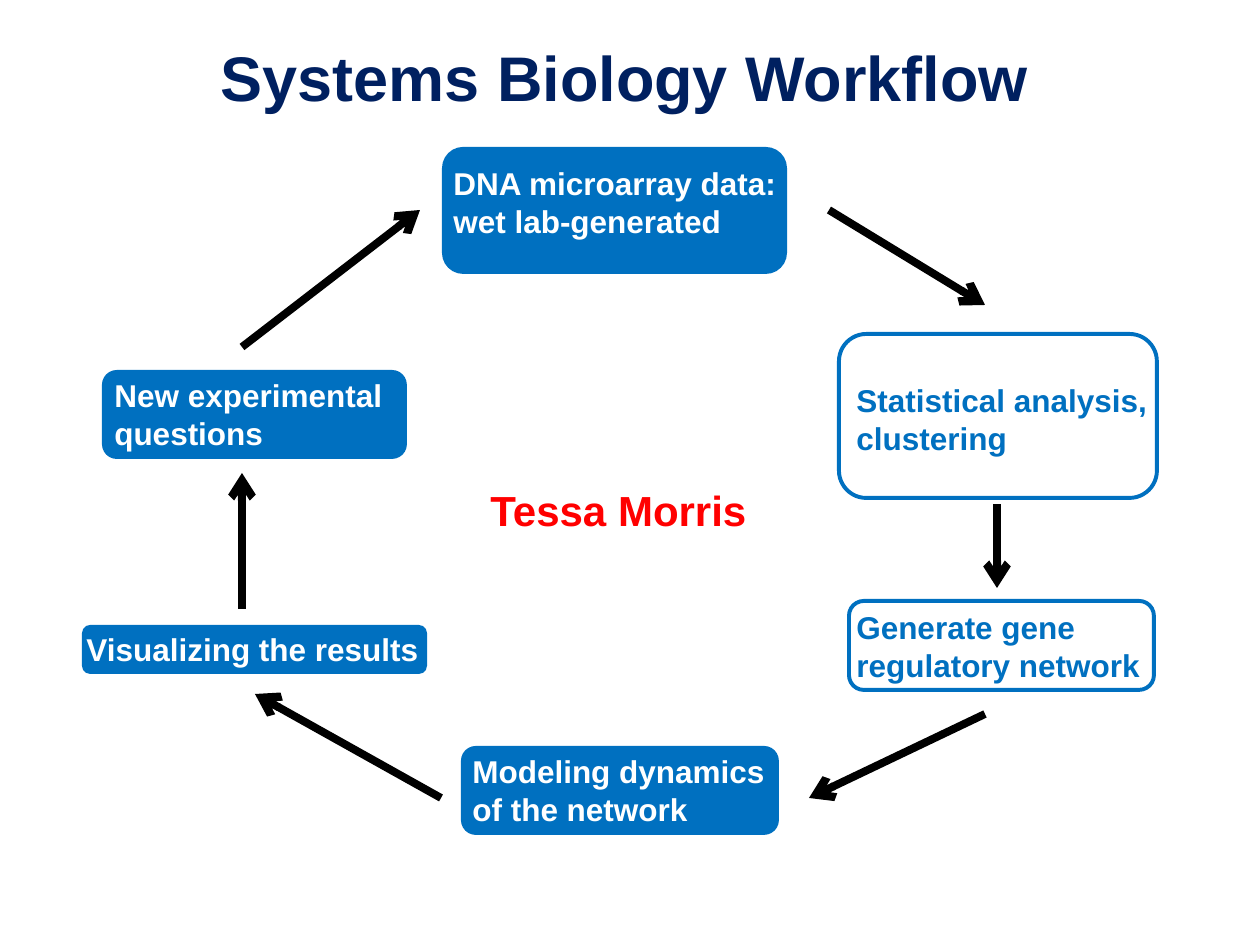
from dataclasses import dataclass

from lxml.etree import SubElement
from pptx import Presentation
from pptx.dml.color import RGBColor
from pptx.enum.shapes import MSO_CONNECTOR, MSO_SHAPE
from pptx.enum.text import MSO_ANCHOR, PP_ALIGN
from pptx.oxml.ns import qn
from pptx.util import Pt

PX = 914400 / 126  # EMU in one px


@dataclass(frozen=True)
class Theme:
    font: str = "Arial"
    navy: str = "002060"
    blue: str = "0070C0"
    white: str = "FFFFFF"
    red: str = "FF0000"
    black: str = "000000"
    title_size: int = 36
    author_size: int = 24
    step_size: int = 18
    outline: float = 2.25
    arrow: float = 4.5


THEME = Theme()

# Content: all places are left, top, width, height in px
TITLE = ("Systems Biology Workflow", (136, 32, 977, 89))
AUTHOR = ("Tessa Morris", (478, 478, 284, 63))

# Steps clockwise: paragraphs, box place, label place, fill, wrap
STEPS = [
    (["DNA microarray data:", "wet lab-generated"],
     (442, 147, 345, 127), (441, 158, 357, 89), "blue", True),
    (["Statistical analysis,", "clustering"],
     (839, 334, 318, 164), (844, 375, 318, 89), None, True),
    (["Generate gene regulatory network"],
     (849, 601, 305, 89), (844, 602, 325, 89), "white", True),
    (["Modeling dynamics of the network"],
     (461, 746, 318, 89), (460, 746, 319, 89), "blue", True),
    (["Visualizing the results"],
     (82, 625, 345, 49), (74, 624, 360, 50), "blue", False),
    (["New experimental questions"],
     (102, 370, 305, 89), (102, 370, 305, 89), "blue", True),
]

# Arrows clockwise: start, end
ARROWS = [
    ((829, 210), (985, 305)),
    ((997, 504), (997, 588)),
    ((985, 714), (809, 798)),
    ((441, 798), (255, 694)),
    ((242, 609), (242, 473)),
    ((242, 347), (420, 210)),
]


def emu(lengths):
    return [round(length * PX) for length in lengths]


def rgb(colour):
    return RGBColor.from_string(colour)


def add_text(slide, paragraphs, place, *, size, colour, align=PP_ALIGN.LEFT, wrap=True):
    frame = slide.shapes.add_textbox(*emu(place)).text_frame
    frame.word_wrap = wrap
    frame.vertical_anchor = MSO_ANCHOR.TOP
    for index, words in enumerate(paragraphs):
        paragraph = frame.paragraphs[0] if index == 0 else frame.add_paragraph()
        paragraph.alignment = align
        run = paragraph.add_run()
        run.text = words
        run.font.name = THEME.font
        run.font.size = Pt(size)
        run.font.bold = True
        run.font.color.rgb = rgb(colour)


def add_box(slide, place, fill):
    box = slide.shapes.add_shape(MSO_SHAPE.ROUNDED_RECTANGLE, *emu(place))
    box.shadow.inherit = False
    if fill:
        box.fill.solid()
        box.fill.fore_color.rgb = rgb(getattr(THEME, fill))
    else:
        box.fill.background()
    if fill == "blue":
        box.line.fill.background()
    else:
        box.line.color.rgb = rgb(THEME.blue)
        box.line.width = Pt(THEME.outline)


def add_arrow(slide, start, end):
    arrow = slide.shapes.add_connector(MSO_CONNECTOR.STRAIGHT, *emu(start + end))
    arrow.line.color.rgb = rgb(THEME.black)
    arrow.line.width = Pt(THEME.arrow)
    properties = arrow.element.spPr
    SubElement(properties.find(qn("a:ln")), qn("a:tailEnd"), type="arrow")
    SubElement(properties, qn("a:effectLst"))


def main():
    deck = Presentation()
    deck.slide_width, deck.slide_height = emu((1260, 945))
    slide = deck.slides.add_slide(deck.slide_layouts[6])

    # Title
    words, place = TITLE
    add_text(slide, [words], place, size=THEME.title_size, colour=THEME.navy,
             align=PP_ALIGN.CENTER)

    # Workflow steps
    for paragraphs, box_place, label_place, fill, wrap in STEPS:
        add_box(slide, box_place, fill)
        add_text(slide, paragraphs, label_place, size=THEME.step_size, wrap=wrap,
                 colour=THEME.white if fill == "blue" else THEME.blue)

    # Arrows between the steps
    for start, end in ARROWS:
        add_arrow(slide, start, end)

    # Author in the middle of the cycle
    words, place = AUTHOR
    add_text(slide, [words], place, size=THEME.author_size, colour=THEME.red, wrap=False)

    deck.save("out.pptx")


if __name__ == "__main__":
    main()
